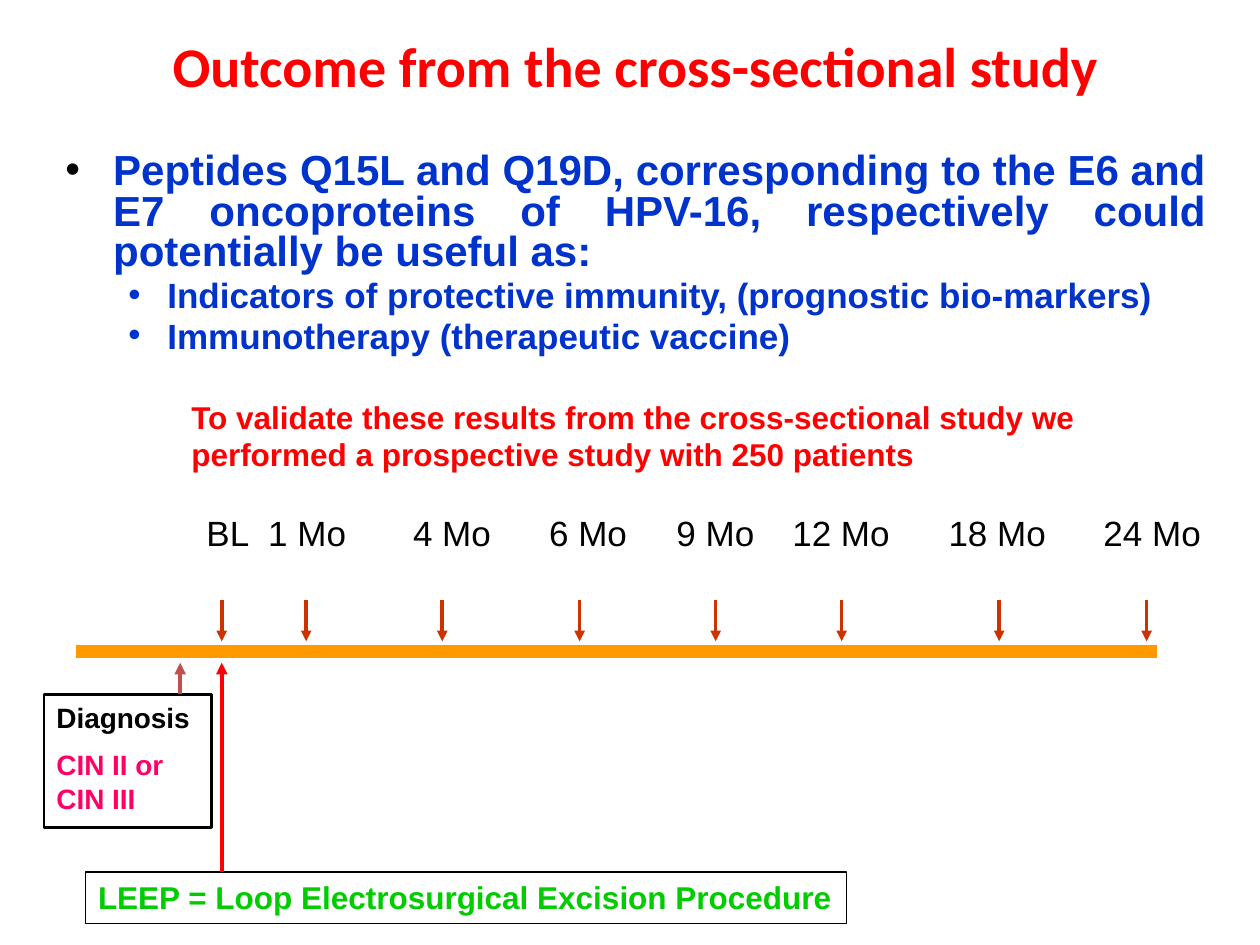
from lxml.etree import SubElement
from pptx import Presentation
from pptx.dml.color import RGBColor
from pptx.enum.shapes import MSO_CONNECTOR as Conn, MSO_SHAPE as Geom
from pptx.enum.text import MSO_ANCHOR as Anchor, PP_ALIGN as Align
from pptx.oxml.ns import qn
from pptx.util import Inches, Pt

RED, BLUE, BLACK, RUST = "FF0000", "0033CC", "000000", "CC3300"


def color(code):
    return RGBColor.from_string(code)


class Deck:
    font = "Arial"

    def __init__(self, width, height):
        self.prs = Presentation()
        self.prs.slide_width, self.prs.slide_height = Inches(width), Inches(height)
        self.slide = self.prs.slides.add_slide(self.prs.slide_layouts[6])

    def text(self, box, anchor=Anchor.TOP):
        """Add an empty text box and return its frame."""
        frame = self.slide.shapes.add_textbox(*map(Inches, box)).text_frame
        frame.word_wrap = True
        frame.vertical_anchor = anchor
        return frame

    def frame(self, box, width, wrap=True):
        """Add an outlined, unfilled rectangle and return its text frame."""
        shape = self.slide.shapes.add_shape(Geom.RECTANGLE, *map(Inches, box))
        shape.shadow.inherit = False
        shape.fill.background()
        shape.line.color.rgb = color(BLACK)
        shape.line.width = Pt(width)
        frame = shape.text_frame
        frame.word_wrap = wrap
        frame.vertical_anchor = Anchor.TOP
        return frame

    def para(self, frame, text, size, ink, bold=True, align=Align.LEFT,
             before=0, font=None, bullet=None, tabs=()):
        """Fill the first paragraph or add one; bullet is (level, left, hang, ink)."""
        para = frame.paragraphs[0]
        if para.runs:
            para = frame.add_paragraph()
        para.add_run().text = text
        para.alignment = align
        para.space_before = Pt(before)
        props = para._p.get_or_add_pPr()
        if bullet:
            level, left, hang, dot = bullet
            para.level = level
            para.line_spacing = 0.8
            props.set("marL", str(Inches(left)))
            props.set("indent", str(-Inches(hang)))
            tone = SubElement(props, qn("a:buClr"))
            SubElement(tone, qn("a:srgbClr"), val=dot)
            SubElement(props, qn("a:buFont"), typeface=self.font)
            SubElement(props, qn("a:buChar"), char="•")
        if tabs:
            stops = SubElement(props, qn("a:tabLst"))
            for stop in tabs:
                SubElement(stops, qn("a:tab"), pos=str(Inches(stop)), algn="l")
        para.font.name = font or self.font
        para.font.size = Pt(size)
        para.font.bold = bold
        para.font.color.rgb = color(ink)

    def line(self, start, end, ink, width, arrow=True):
        link = self.slide.shapes.add_connector(
            Conn.STRAIGHT, *map(Inches, (*start, *end)))
        link.line.color.rgb = color(ink)
        link.line.width = Pt(width)
        if arrow:
            SubElement(link.line._get_or_add_ln(), qn("a:tailEnd"), type="triangle")
        SubElement(link._element.spPr, qn("a:effectLst"))


def main():
    deck = Deck(10, 7.5)

    title = deck.text((0.42, 0.29, 9.25, 0.46), Anchor.MIDDLE)
    deck.para(title, "Outcome from the cross-sectional study", 32, RED,
              align=Align.CENTER, font="Calibri")

    body = deck.text((0.42, 1.17, 9.25, 1.83))
    deck.para(body, "Peptides Q15L and Q19D, corresponding to the E6 and E7 "
              "oncoproteins of HPV-16, respectively could potentially be useful as:",
              24, BLUE, align=Align.JUSTIFY, bullet=(0, 0.38, 0.38, BLACK))
    for point in ("Indicators of protective immunity, (prognostic bio-markers)",
                  "Immunotherapy (therapeutic vaccine)"):
        deck.para(body, point, 20, BLUE, align=Align.JUSTIFY, before=4,
                  bullet=(1, 0.81, 0.31, BLUE))

    aim = deck.text((1.42, 3.08, 7.58, 0.75), Anchor.MIDDLE)
    deck.para(aim, "To validate these results from the cross-sectional study we "
              "performed a prospective study with 250 patients", 18, RED)

    # Visit label, arrow x, label tab stop
    visits = [("BL", 1.76, 0.69), ("1 Mo", 2.43, 1.18), ("4 Mo", 3.51, 2.33),
              ("6 Mo", 4.6, 3.41), ("9 Mo", 5.68, 4.42), ("12 Mo", 6.68, 5.34),
              ("18 Mo", 7.93, 6.58), ("24 Mo", 9.1, 7.81)]
    names, marks, stops = zip(*visits)
    deck.line((0.6, 5.17), (9.18, 5.17), "FF9900", 7.75, arrow=False)
    for x in marks:
        deck.line((x, 4.76), (x, 5.09), RUST, 2)
    labels = deck.text((0.85, 4.01, 8.83, 0.44))
    deck.para(labels, "".join("\t" + name for name in names), 20, BLACK,
              bold=False, tabs=stops)

    finding = deck.frame((0.35, 5.51, 1.33, 1.06), 1.5)
    deck.para(finding, "Diagnosis", 16, BLACK)
    deck.para(finding, "CIN II or CIN III", 16, "FF0066", before=8)
    deck.line((1.43, 5.51), (1.43, 5.26), "C0504D", 2.25)

    leep = deck.frame((0.68, 6.92, 6.04, 0.41), 0.75, wrap=False)
    deck.para(leep, "LEEP = Loop Electrosurgical Excision Procedure", 18, "00CC00")
    deck.line((1.76, 6.92), (1.76, 5.26), RED, 2.25)

    deck.prs.save("out.pptx")


if __name__ == "__main__":
    main()
